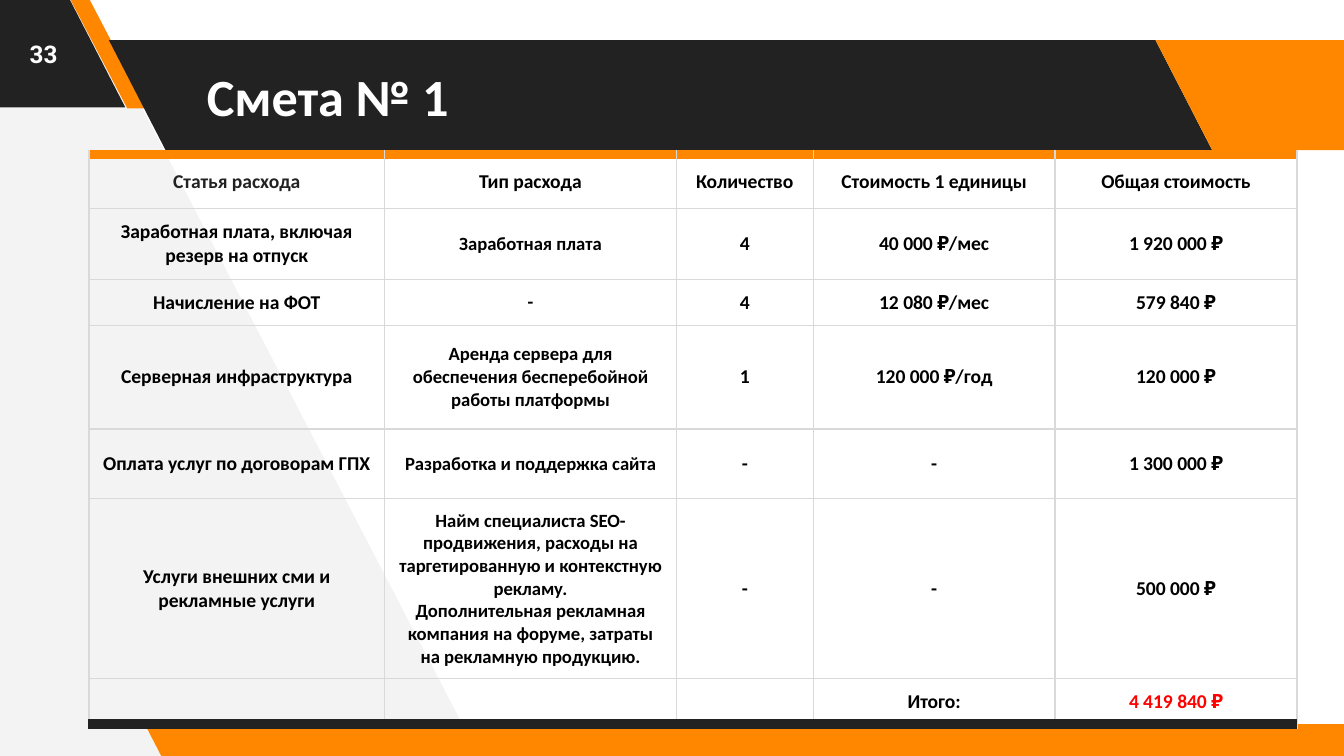
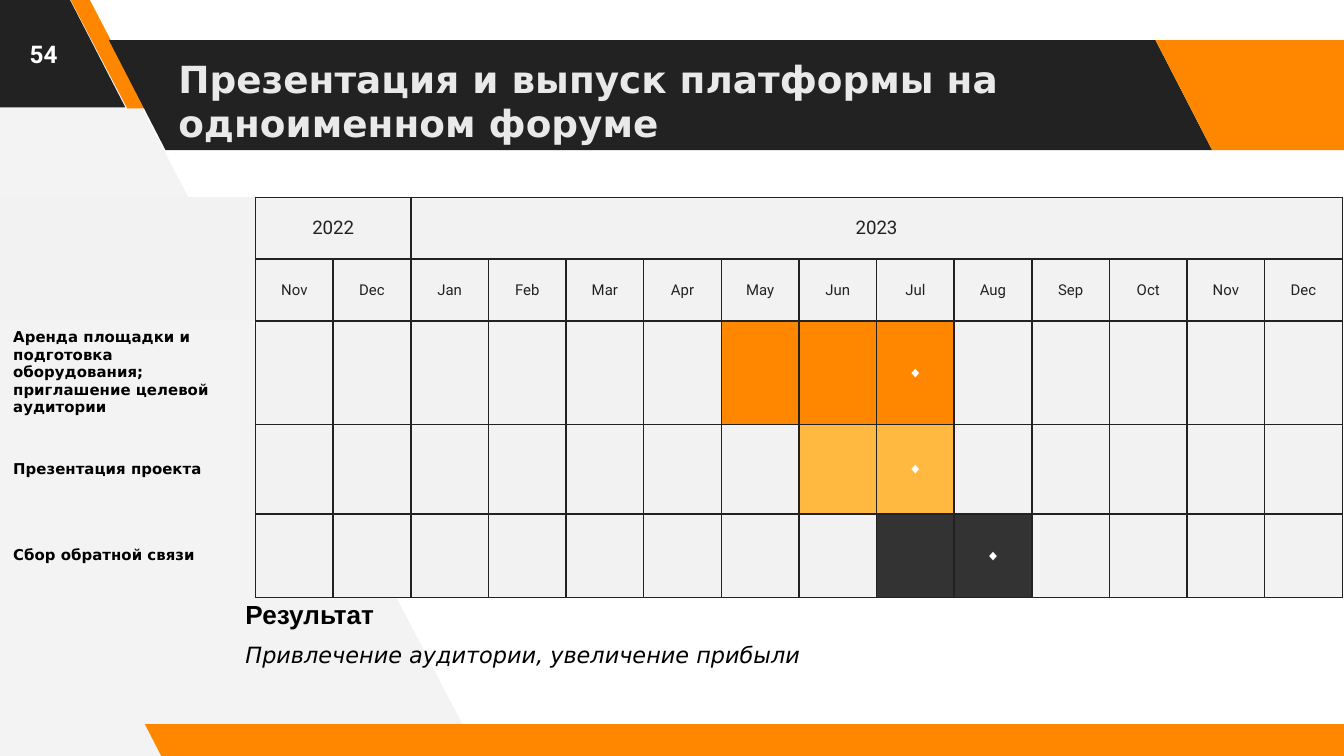
from copy import deepcopy

from lxml import etree
from pptx import Presentation
from pptx.dml.color import RGBColor
from pptx.enum.shapes import MSO_SHAPE
from pptx.enum.text import MSO_ANCHOR, PP_ALIGN
from pptx.oxml.ns import qn
from pptx.util import Cm, Pt

CENTER, LEFT = PP_ALIGN.CENTER, PP_ALIGN.LEFT
MIDDLE, TOP = MSO_ANCHOR.MIDDLE, MSO_ANCHOR.TOP
PARALLELOGRAM = MSO_SHAPE.PARALLELOGRAM

ORANGE, AMBER, DARK, CHARCOAL = "FF8700", "FFB840", "222222", "333333"
PALE, PANEL, RULE = "F2F2F2", "F3F3F3", "D9D9D9"
BLACK, WHITE, LIGHT, RED = "000000", "FFFFFF", "E9E9E9", "FF0000"
NO_STYLE = "{2D5ABB26-0587-4C30-8999-92F81FD0307C}"

colour = RGBColor.from_string


def write(para, text, size=10.5, font="Calibri", color=BLACK, bold=False,
          italic=False, align=LEFT, before=0):
    """Fill a paragraph; a vertical tab in the text is a line break."""
    para.text = text
    para.alignment = align
    if before:
        para.space_before = Pt(before)
    for span in para.runs:
        span.font.size, span.font.name = Pt(size), font
        span.font.bold, span.font.italic = bold, italic
        span.font.color.rgb = colour(color)
    for line_break in para._p.findall(qn("a:br")):
        line_break.append(deepcopy(para.runs[0]._r.rPr))
    if not text:
        etree.SubElement(para._p, qn("a:endParaRPr"), sz=str(int(size * 100)))


def dress(cell, fill, margin, **edges):
    """Give a cell its borders, as L, R, T, B = (colour, points), and fill."""
    properties = cell._tc.get_or_add_tcPr()
    for side in "LRTB":
        color, points = edges.get(side, (None, 0))
        line = etree.SubElement(properties, qn("a:ln" + side), w=str(Pt(points)))
        if color:
            solid = etree.SubElement(line, qn("a:solidFill"))
            etree.SubElement(solid, qn("a:srgbClr"), val=color)
        else:
            etree.SubElement(line, qn("a:noFill"))
    if fill:
        cell.fill.solid()
        cell.fill.fore_color.rgb = colour(fill)
    else:
        cell.fill.background()
    cell.vertical_anchor = MIDDLE
    cell.margin_left = cell.margin_right = Cm(0.25)
    cell.margin_top = cell.margin_bottom = Cm(margin)


deck = Presentation()
deck.slide_width, deck.slide_height = Cm(25.4), Cm(14.29)
budget_page, plan_page = [
    deck.slides.add_slide(deck.slide_layouts[6]) for _ in range(2)]

# Shared background: slanted panel and bands (left, top, width, height, slant)
panel_points = [(9.04, 14.27), (1.57, -0.1), (-0.15, -0.1), (-0.05, 14.38)]
bands = [
    (-2.51, -0.05, 4.88, 2.08, 0.515, DARK),
    (1.32, -0.03, 1.45, 2.08, 0.75, ORANGE),
    (2.06, 0.76, 20.85, 2.08, 0.515, DARK),
    (21.84, 0.76, 4.88, 2.08, 0.515, ORANGE),
    (2.74, 13.69, 23.24, 0.64, 0.515, ORANGE),
]
for page in (budget_page, plan_page):
    corners = [(Cm(x), Cm(y)) for x, y in panel_points]
    builder = page.shapes.build_freeform(*corners[0])
    builder.add_line_segments(corners[1:])
    pieces = [(builder.convert_to_shape(), PANEL)]
    for left, top, width, height, slant, color in bands:
        band = page.shapes.add_shape(
            PARALLELOGRAM, Cm(left), Cm(top), Cm(width), Cm(height))
        band.adjustments[0] = slant
        band._element.spPr.xfrm.set("flipH", "1")
        pieces.append((band, color))
    for piece, color in pieces:
        piece.shadow.inherit = False
        piece.fill.solid()
        piece.fill.fore_color.rgb = colour(color)
        piece.line.fill.background()

# Page numbers, titles and the result text
number = dict(size=13, font="Roboto", color=WHITE, bold=True, align=CENTER)
boxes = [
    (budget_page, 0, 0, 1.65, 2.03, MIDDLE, [("33", number)]),
    (budget_page, 3.66, 0.76, 18.67, 2.08, MIDDLE, [
        ("Смета № 1", dict(size=28, color=WHITE, bold=True))]),
    (plan_page, 0, 0, 1.65, 2.03, MIDDLE, [("54", number)]),
    (plan_page, 3.12, 0.86, 18.67, 2.08, MIDDLE, [
        ("Презентация и выпуск платформы на одноименном форуме",
         dict(size=20, font="DejaVu Sans", color=LIGHT, bold=True))]),
    (plan_page, 4.39, 11.07, 20.9, 2.67, TOP, [
        ("Результат", dict(size=14, font="Arial", bold=True)),
        ("Привлечение аудитории, увеличение прибыли",
         dict(size=12, font="DejaVu Sans", italic=True, before=6))]),
]
for page, left, top, width, height, anchor, lines in boxes:
    box = page.shapes.add_textbox(Cm(left), Cm(top), Cm(width), Cm(height))
    frame = box.text_frame
    frame.word_wrap = True
    frame.vertical_anchor = anchor
    frame.margin_left = frame.margin_right = Cm(0.25)
    frame.margin_top = frame.margin_bottom = Cm(0.25)
    for index, (text, look) in enumerate(lines):
        para = frame.add_paragraph() if index else frame.paragraphs[0]
        write(para, text, **look)

# Contents of the budget
budget = [
    ["Статья расхода", "Тип расхода", "Количество", "Стоимость 1 единицы",
     "Общая стоимость"],
    ["Заработная плата, включая резерв на отпуск", "Заработная плата", "4",
     "40 000 ₽/мес", "1 920 000 ₽"],
    ["Начисление на ФОТ", "-", "4", "12 080 ₽/мес", "579 840 ₽"],
    ["Серверная инфраструктура",
     "Аренда сервера для обеспечения бесперебойной работы платформы", "1",
     "120 000 ₽/год", "120 000 ₽"],
    ["Оплата услуг по договорам ГПХ", "Разработка и поддержка сайта", "-",
     "-", "1 300 000 ₽"],
    ["Услуги внешних сми и рекламные услуги",
     "Найм специалиста SEO-продвижения, расходы на таргетированную и "
     "контекстную рекламу.\vДополнительная рекламная компания на форуме, "
     "затраты на рекламную продукцию.", "-", "-", "500 000 ₽"],
    ["", "", "", "Итого:", "4 419 840 ₽"],
]
budget_widths = [5.59, 5.51, 2.59, 4.57, 4.57]
budget_heights = [1.02, 1.35, 0.86, 1.96, 1.32, 3.4, 0.86]

# Contents of the plan: label, label fill, first and last month column, bar
months = "Nov Dec Jan Feb Mar Apr May Jun Jul Aug Sep Oct Nov Dec".split()
tasks = [
    ("Аренда площадки и подготовка оборудования; приглашение целевой "
     "аудитории", None, 7, 9, ORANGE),
    ("Презентация проекта", PANEL, 8, 9, AMBER),
    ("Сбор обратной связи", None, 9, 10, CHARCOAL),
]
label_width, plan_width = 4.83, 25.37
month_width = (plan_width - label_width) / len(months)
plan_widths = [label_width] + [month_width] * len(months)
plan_heights = [1.17, 1.17, 1.7, 1.7, 1.57]

# Both table grids
tables = []
for page, left, top, widths, heights in (
        (budget_page, 1.68, 2.92, budget_widths, budget_heights),
        (plan_page, 0, 3.73, plan_widths, plan_heights)):
    holder = page.shapes.add_table(
        len(heights), len(widths), Cm(left), Cm(top),
        Cm(sum(widths)), Cm(sum(heights)))
    table = holder.table
    table.first_row = table.horz_banding = False
    table._tbl.tblPr.find(qn("a:tableStyleId")).text = NO_STYLE
    for column, width in zip(table.columns, widths):
        column.width = Cm(width)
    for row, height in zip(table.rows, heights):
        row.height = Cm(height)
    tables.append(table)
budget_table, plan_table = tables

# Budget cells: thick orange rule on top, thick dark rule at the bottom
thin = (RULE, 0.75)
last_row = len(budget) - 1
for row, texts in enumerate(budget):
    for column, text in enumerate(texts):
        cell = budget_table.cell(row, column)
        dress(cell, None, 0.18, L=thin, R=thin,
              T=(ORANGE, 6) if row == 0 else thin,
              B=(DARK, 6) if row == last_row else thin)
        color = BLACK
        if (row, column) == (0, 0):
            color = DARK
        elif (row, column) == (last_row, 4):
            color = RED
        write(cell.text_frame.paragraphs[0], text, color=color, bold=True,
              size=10 if row and column == 1 else 10.5, align=CENTER)

# Plan cells: borders and fills of the month grid, then the texts
edge = (DARK, 1)
heading = dict(font="Roboto", color=DARK, align=CENTER)
for row in range(len(plan_heights)):
    if row < 2:
        label, label_fill, first, last, bar = "", PALE, 0, 0, PALE
    else:
        label, label_fill, first, last, bar = tasks[row - 2]
    label_cell = plan_table.cell(row, 0)
    dress(label_cell, label_fill, 0.13, R=edge)
    write(label_cell.text_frame.paragraphs[0], label, size=8,
          font="DejaVu Sans", bold=True)
    for column, month in enumerate(months, start=1):
        cell = plan_table.cell(row, column)
        dress(cell, bar if first <= column <= last else PALE, 0.13,
              L=edge, R=edge, T=edge, B=edge)
        para = cell.text_frame.paragraphs[0]
        if row == 1:
            write(para, month, size=8, **heading)
        elif row > 1:
            write(para, "◆" if column == last else "", size=8, font="Arial",
                  color=WHITE, align=CENTER)

# Years span their months
for year, first, last in (("2022", 1, 2), ("2023", 3, 14)):
    cell = plan_table.cell(0, first)
    cell.merge(plan_table.cell(0, last))
    write(cell.text_frame.paragraphs[0], year, size=10, **heading)

deck.save("out.pptx")
